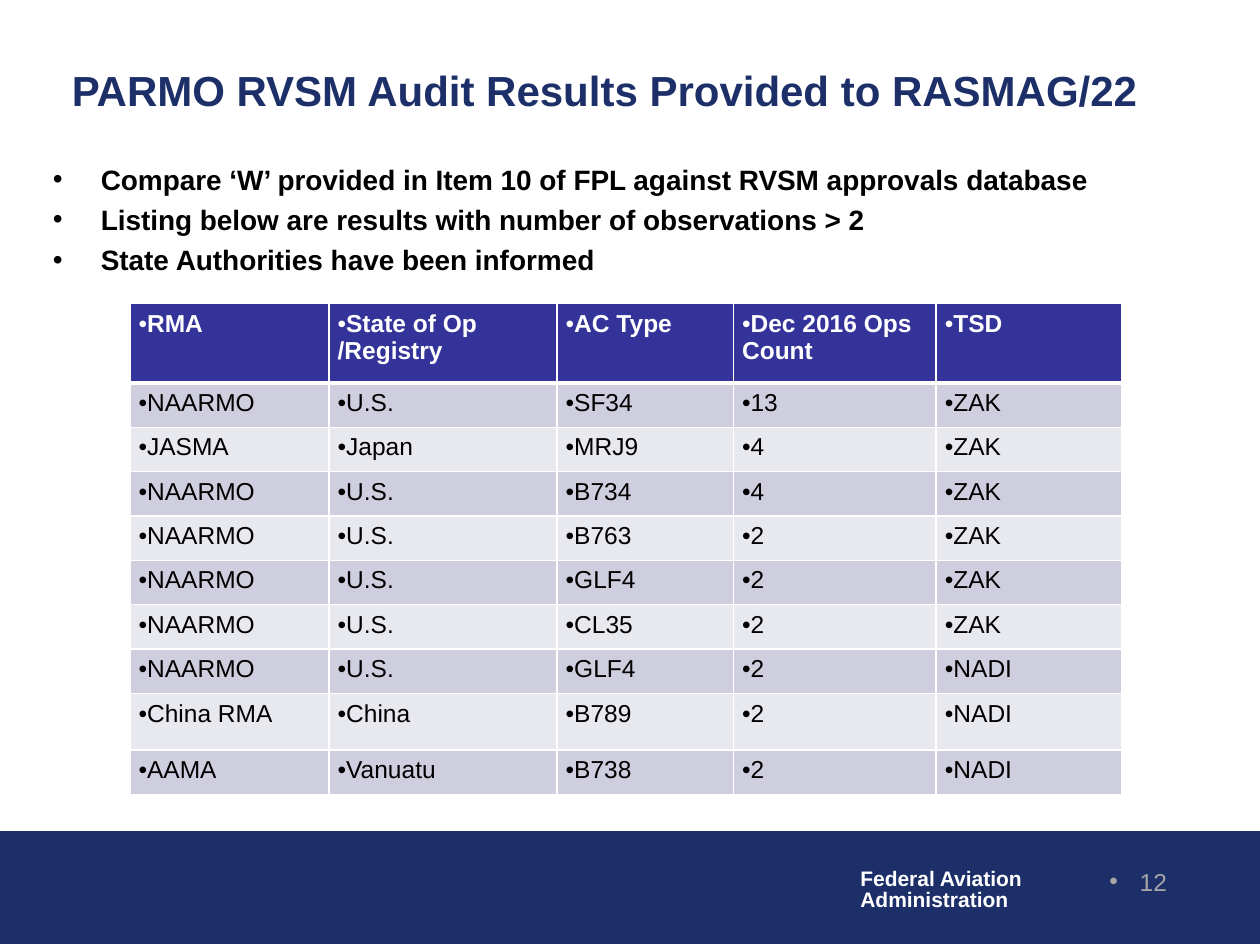
from dataclasses import dataclass

from lxml.etree import SubElement
from pptx import Presentation
from pptx.dml.color import RGBColor
from pptx.enum.shapes import MSO_SHAPE
from pptx.enum.text import MSO_ANCHOR, MSO_AUTO_SIZE, PP_ALIGN
from pptx.oxml import parse_xml
from pptx.oxml.ns import nsdecls, qn
from pptx.util import Inches, Pt


@dataclass(frozen=True)
class Theme:
    """Colours, font and type sizes of the slide."""
    font: str = "Arial"
    navy: str = "1D2F68"
    header: str = "333399"
    bands: tuple = ("CECEDE", "E8E8EF")
    white: str = "FFFFFF"
    black: str = "000000"
    grey: str = "A6A6A6"
    title_size: int = 24
    body_size: int = 16
    table_size: int = 14
    footer_size: int = 12


THEME = Theme()
GRID_COLUMNS, GRID_ROWS = 100, 75
SLIDE_WIDTH, SLIDE_HEIGHT = Inches(10), Inches(7.5)

TITLE = "PARMO RVSM Audit Results Provided to RASMAG/22"
POINTS = (
    "Compare ‘W’ provided in Item 10 of FPL against RVSM approvals database",
    "Listing below are results with number of observations > 2",
    "State Authorities have been informed",
)
COLUMN_SPANS = (15.8, 18.1, 14, 16.1, 14.7)
HEADER_SPAN, ROW_SPAN, TALL_ROW_SPAN = 6.3, 3.52, 4.5
TALL_RMA = "China RMA"
AUDIT = (
    ("RMA", "State of Op /Registry", "AC Type", "Dec 2016 Ops Count", "TSD"),
    ("NAARMO", "U.S.", "SF34", "13", "ZAK"),
    ("JASMA", "Japan", "MRJ9", "4", "ZAK"),
    ("NAARMO", "U.S.", "B734", "4", "ZAK"),
    ("NAARMO", "U.S.", "B763", "2", "ZAK"),
    ("NAARMO", "U.S.", "GLF4", "2", "ZAK"),
    ("NAARMO", "U.S.", "CL35", "2", "ZAK"),
    ("NAARMO", "U.S.", "GLF4", "2", "NADI"),
    ("China RMA", "China", "B789", "2", "NADI"),
    ("AAMA", "Vanuatu", "B738", "2", "NADI"),
)


def across(columns):
    """Return the width of a number of grid columns."""
    return round(SLIDE_WIDTH * columns / GRID_COLUMNS)


def down(rows):
    """Return the height of a number of grid rows."""
    return round(SLIDE_HEIGHT * rows / GRID_ROWS)


def area(column, row, columns, rows):
    """Return left, top, width and height of a grid area."""
    return across(column), down(row), across(columns), down(rows)


def place(shape, *cells):
    """Move a placeholder to a grid area."""
    shape.left, shape.top, shape.width, shape.height = area(*cells)


def style_runs(paragraph, size, color, bold=False):
    """Format every run of a paragraph."""
    for run in paragraph.runs:
        run.font.name = THEME.font
        run.font.size = Pt(size)
        run.font.bold = bold
        run.font.color.rgb = RGBColor.from_string(color)


def add_bullet(paragraph, hanging=0):
    """Give a paragraph a round bullet with a hanging indent in inches."""
    properties = paragraph._p.get_or_add_pPr()
    properties.set("marL", str(Inches(hanging)))
    properties.set("indent", str(-Inches(hanging)))
    SubElement(properties, qn("a:buFont")).set("typeface", THEME.font)
    SubElement(properties, qn("a:buChar")).set("char", "•")


def set_borders(cell, top, bottom):
    """Draw white cell borders with the given top and bottom widths."""
    properties = cell._tc.get_or_add_tcPr()
    widths = {"lnL": 1, "lnR": 1, "lnT": top, "lnB": bottom}
    for position, (side, width) in enumerate(widths.items()):
        properties.insert(position, parse_xml(
            f'<a:{side} {nsdecls("a")} w="{Pt(width)}"><a:solidFill>'
            f'<a:srgbClr val="{THEME.white}"/></a:solidFill></a:{side}>'))


def fill_title(slide):
    """Write the slide title."""
    title = slide.shapes.title
    place(title, 4.7, 3.8, 92.7, 6.7)
    frame = title.text_frame
    frame.text = TITLE
    frame.auto_size = MSO_AUTO_SIZE.NONE
    frame.vertical_anchor = MSO_ANCHOR.MIDDLE
    frame.paragraphs[0].alignment = PP_ALIGN.LEFT
    style_runs(frame.paragraphs[0], THEME.title_size, THEME.navy, True)


def fill_body(slide):
    """Write the bulleted list."""
    body = slide.placeholders[1]
    place(body, 3.2, 12.1, 88, 11.2)
    frame = body.text_frame
    frame.text = "\n".join(POINTS)
    frame.auto_size = MSO_AUTO_SIZE.NONE
    frame.margin_top = Inches(0.08)
    for index, paragraph in enumerate(frame.paragraphs):
        paragraph.space_before = Pt(3.7 if index else 0)
        add_bullet(paragraph, 0.38)
        style_runs(paragraph, THEME.body_size, THEME.black, True)


def fill_cell(cell, text, row):
    """Write and format one table cell."""
    is_header = row == 0
    cell.text = text
    cell.margin_left = cell.margin_right = Inches(0.07)
    cell.margin_top = cell.margin_bottom = Inches(0.05)
    cell.fill.solid()
    fill = THEME.header if is_header else THEME.bands[(row - 1) % 2]
    cell.fill.fore_color.rgb = RGBColor.from_string(fill)
    set_borders(cell, top=3 if row == 1 else 1, bottom=3 if is_header else 1)
    paragraph = cell.text_frame.paragraphs[0]
    add_bullet(paragraph)
    color = THEME.white if is_header else THEME.black
    style_runs(paragraph, THEME.table_size, color, is_header)


def add_audit_table(slide):
    """Add the table of audit results."""
    table = slide.shapes.add_table(
        len(AUDIT), len(COLUMN_SPANS), *area(10.3, 24.1, 78.7, 39)).table
    for column, span in zip(table.columns, COLUMN_SPANS):
        column.width = across(span)
    for row, values in enumerate(AUDIT):
        span = TALL_ROW_SPAN if values[0] == TALL_RMA else ROW_SPAN
        table.rows[row].height = down(span if row else HEADER_SPAN)
        for column, text in enumerate(values):
            fill_cell(table.cell(row, column), text, row)


def add_footer_band(slide):
    """Add the coloured band along the bottom edge."""
    band = slide.shapes.add_shape(MSO_SHAPE.RECTANGLE, *area(0, 66, 100, 8.9))
    band.shadow.inherit = False
    band.fill.solid()
    band.fill.fore_color.rgb = RGBColor.from_string(THEME.navy)
    band.line.color.rgb = RGBColor.from_string(THEME.navy)
    band.line.width = Pt(0.75)


def add_agency(slide):
    """Add the agency name on the footer band."""
    frame = slide.shapes.add_textbox(*area(67.3, 68.5, 15, 4.4)).text_frame
    frame.text = "Federal Aviation\nAdministration"
    frame.word_wrap = False
    frame.auto_size = MSO_AUTO_SIZE.SHAPE_TO_FIT_TEXT
    for paragraph in frame.paragraphs:
        paragraph.line_spacing = 0.85
        style_runs(paragraph, THEME.footer_size, THEME.white, True)


def add_page_number(slide):
    """Add the bulleted page number on the footer band."""
    frame = slide.shapes.add_textbox(*area(81.2, 68.3, 12.4, 5)).text_frame
    frame.text = "12"
    frame.word_wrap = True
    paragraph = frame.paragraphs[0]
    paragraph.alignment = PP_ALIGN.RIGHT
    add_bullet(paragraph, 0.24)
    style_runs(paragraph, THEME.table_size, THEME.grey)


def main():
    """Build and save the slide."""
    presentation = Presentation()
    presentation.slide_width = SLIDE_WIDTH
    presentation.slide_height = SLIDE_HEIGHT
    slide = presentation.slides.add_slide(presentation.slide_layouts[1])
    for build in (add_footer_band, add_agency, fill_title, add_audit_table,
                  fill_body, add_page_number):
        build(slide)
    presentation.save("out.pptx")


if __name__ == "__main__":
    main()
